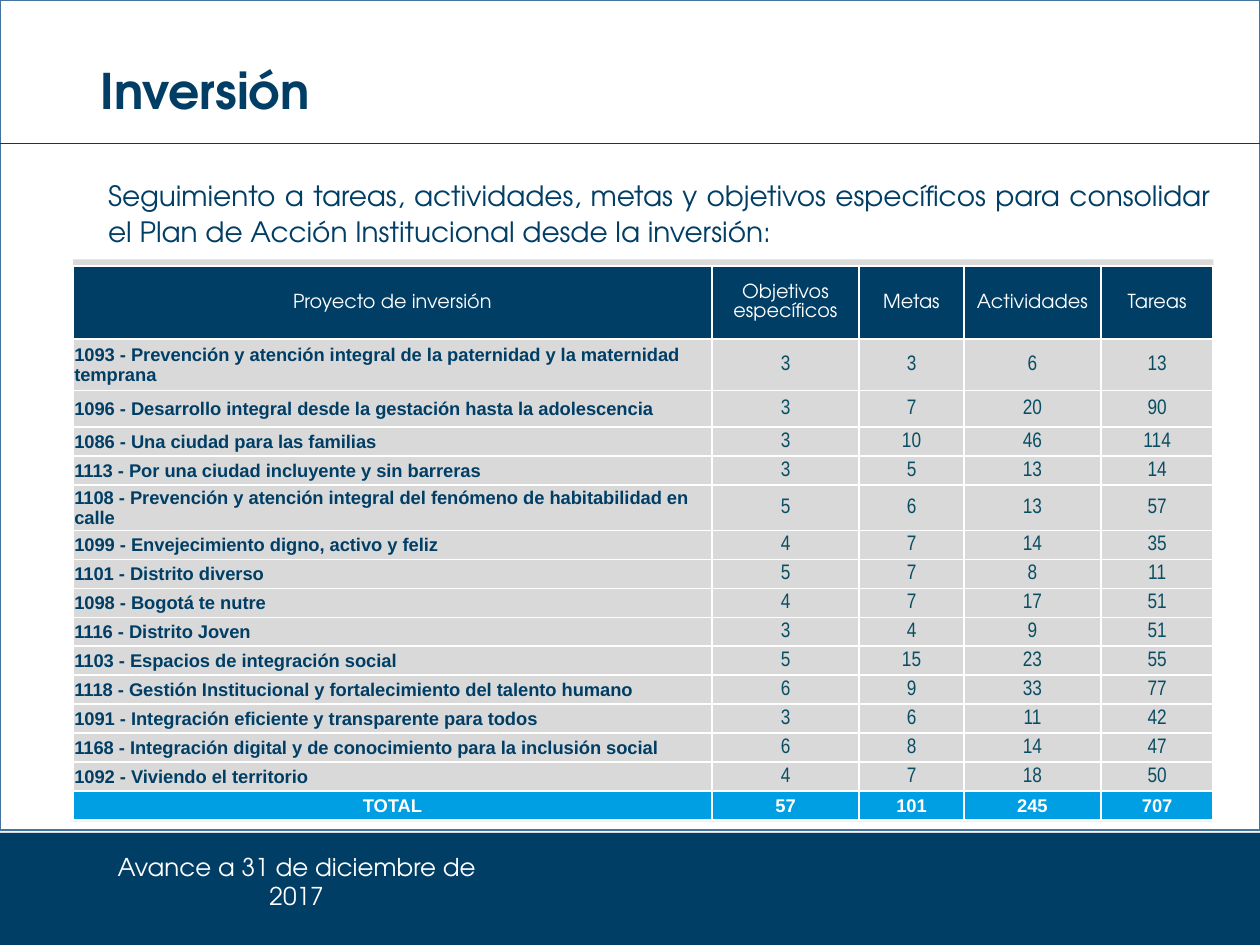
from lxml import etree
from pptx import Presentation
from pptx.dml.color import RGBColor
from pptx.enum.shapes import MSO_CONNECTOR, MSO_SHAPE
from pptx.enum.text import MSO_ANCHOR, PP_ALIGN
from pptx.oxml.ns import qn
from pptx.util import Inches, Pt

RECT = MSO_SHAPE.RECTANGLE
STRAIGHT = MSO_CONNECTOR.STRAIGHT
TOP, MIDDLE = MSO_ANCHOR.TOP, MSO_ANCHOR.MIDDLE
LEFT, CENTER, JUSTIFY = PP_ALIGN.LEFT, PP_ALIGN.CENTER, PP_ALIGN.JUSTIFY

COLORS = {
    "navy": "003E65",
    "teal": "094D63",
    "sky": "009FE3",
    "frame": "43739E",
    "panel": "D9D9D9",
    "light": "F2F2F2",
    "white": "FFFFFF",
}
DISPLAY, BODY, NARROW = "TeX Gyre Adventor", "Arial", "Arial Narrow"

HEADERS = ["Proyecto de inversión", "Objetivos específicos", "Metas", "Actividades", "Tareas"]
PROJECTS = [
    ("1093 - Prevención y atención integral de la paternidad y la maternidad temprana", 3, 3, 6, 13),
    ("1096 - Desarrollo integral desde la gestación hasta la adolescencia", 3, 7, 20, 90),
    ("1086 - Una ciudad para las familias", 3, 10, 46, 114),
    ("1113 - Por una ciudad incluyente y sin barreras", 3, 5, 13, 14),
    ("1108 - Prevención y atención integral del fenómeno de habitabilidad en calle", 5, 6, 13, 57),
    ("1099 - Envejecimiento digno, activo y feliz", 4, 7, 14, 35),
    ("1101 - Distrito diverso", 5, 7, 8, 11),
    ("1098 - Bogotá te nutre", 4, 7, 17, 51),
    ("1116 - Distrito Joven", 3, 4, 9, 51),
    ("1103 - Espacios de integración social", 5, 15, 23, 55),
    ("1118 - Gestión Institucional y fortalecimiento del talento humano", 6, 9, 33, 77),
    ("1091 - Integración eficiente y transparente para todos", 3, 6, 11, 42),
    ("1168 - Integración digital y de conocimiento para la inclusión social", 6, 8, 14, 47),
    ("1092 - Viviendo el territorio", 4, 7, 18, 50),
]
COL_WIDTHS = [5.07, 1.17, 0.83, 1.09, 0.89]
ROW_HEIGHT = 0.23
TALL_ROWS = {0: 0.58, 1: 0.41, 2: 0.29, 5: 0.29}


def rgb(name):
    return RGBColor.from_string(COLORS[name])


def write(tf, text, font, size, color, bold=False, align=LEFT, spacing=None):
    p = tf.paragraphs[0]
    p.alignment = align
    if spacing:
        p.line_spacing = spacing
    r = p.add_run()
    r.text = text
    r.font.name = font
    r.font.size = Pt(size)
    r.font.bold = bold
    r.font.color.rgb = rgb(color)


def add_rect(s, x, y, w, h, fill, line=None):
    sp = s.shapes.add_shape(RECT, Inches(x), Inches(y), Inches(w), Inches(h))
    sp.shadow.inherit = False
    sp.fill.solid()
    sp.fill.fore_color.rgb = rgb(fill)
    if line:
        sp.line.color.rgb = rgb(line)
        sp.line.width = Pt(1)
    else:
        sp.line.fill.background()


def add_text(s, x, y, w, h, text, size, color, anchor=TOP, inset=(0.1, 0.05), **style):
    tf = s.shapes.add_textbox(Inches(x), Inches(y), Inches(w), Inches(h)).text_frame
    tf.word_wrap = True
    tf.vertical_anchor = anchor
    tf.margin_left = tf.margin_right = Inches(inset[0])
    tf.margin_top = Inches(inset[1])
    write(tf, text, DISPLAY, size, color, **style)


def add_rule(s, y, color):
    cn = s.shapes.add_connector(STRAIGHT, Inches(10), Inches(y), Inches(0), Inches(y))
    cn.line.color.rgb = rgb(color)
    cn.line.width = Pt(1)
    etree.SubElement(cn._element.spPr, qn("a:effectLst"))


def set_borders(cell, color):
    tcPr = cell._tc.get_or_add_tcPr()
    for side in ("L", "R", "T", "B"):
        ln = etree.SubElement(tcPr, qn(f"a:ln{side}"), w=str(Pt(1)))
        fill = etree.SubElement(ln, qn("a:solidFill"))
        etree.SubElement(fill, qn("a:srgbClr"), val=COLORS[color])


def fill_cell(cell, text, fill=None, inset=(0.01, 0.01), **style):
    set_borders(cell, "white")
    cell.vertical_anchor = MIDDLE
    cell.margin_left = cell.margin_right = Inches(inset[0])
    cell.margin_top, cell.margin_bottom = Inches(inset[1]), 0
    if fill:
        cell.fill.solid()
        cell.fill.fore_color.rgb = rgb(fill)
    else:
        cell.fill.background()
    write(cell.text_frame, str(text), **style)


def add_investment_table(s, x, y):
    totals = [sum(column) for column in list(zip(*PROJECTS))[1:]]
    rows = [HEADERS, *PROJECTS, ["TOTAL", *totals]]
    heights = [TALL_ROWS.get(i, ROW_HEIGHT) for i in range(len(rows))]
    table = s.shapes.add_table(
        len(rows), len(COL_WIDTHS), Inches(x), Inches(y),
        Inches(sum(COL_WIDTHS)), Inches(sum(heights)),
    ).table
    table.first_row = table.horz_banding = False
    for column, width in zip(table.columns, COL_WIDTHS):
        column.width = Inches(width)
    for row, height in zip(table.rows, heights):
        row.height = Inches(height)

    band = dict(inset=(0.05, 0), color="white", align=CENTER, spacing=1.07)
    header = dict(band, fill="navy", font=DISPLAY, size=11)
    total = dict(band, fill="sky", font=BODY, size=10.5, bold=True)
    project = dict(font=BODY, size=10.5, color="navy", bold=True)
    number = dict(font=NARROW, size=12, color="teal", align=CENTER)
    for i, values in enumerate(rows):
        for j, value in enumerate(values):
            if i == 0:
                style = header
            elif i == len(rows) - 1:
                style = total
            else:
                style = number if j else project
            fill_cell(table.cell(i, j), value, **style)


def main():
    prs = Presentation()
    prs.slide_width, prs.slide_height = Inches(10), Inches(7.5)
    s = prs.slides.add_slide(prs.slide_layouts[6])

    add_rect(s, 0, 0, 10, 7.43, "light")
    add_rect(s, 0, 6.61, 10, 0.89, "navy")
    add_rect(s, 0, 0, 10, 6.59, "white", line="frame")
    add_text(s, 0.59, 6.67, 3.53, 0.6, "Avance a 31 de diciembre de 2017", 14, "white",
             inset=(0.2, 0.09), align=CENTER)
    add_rect(s, 0.58, 2.06, 9.05, 4.46, "panel")
    add_text(s, 0.7, 0.38, 8.62, 0.67, "Inversión", 28, "navy", anchor=MIDDLE, bold=True)
    add_rule(s, 1.14, "navy")
    add_text(s, 0.76, 1.35, 8.95, 0.65,
             "Seguimiento a tareas, actividades, metas y objetivos específicos para consolidar "
             "el Plan de Acción Institucional desde la inversión:",
             16, "navy", align=JUSTIFY, spacing=1.07)
    add_investment_table(s, 0.58, 2.11)

    prs.save("out.pptx")


if __name__ == "__main__":
    main()
